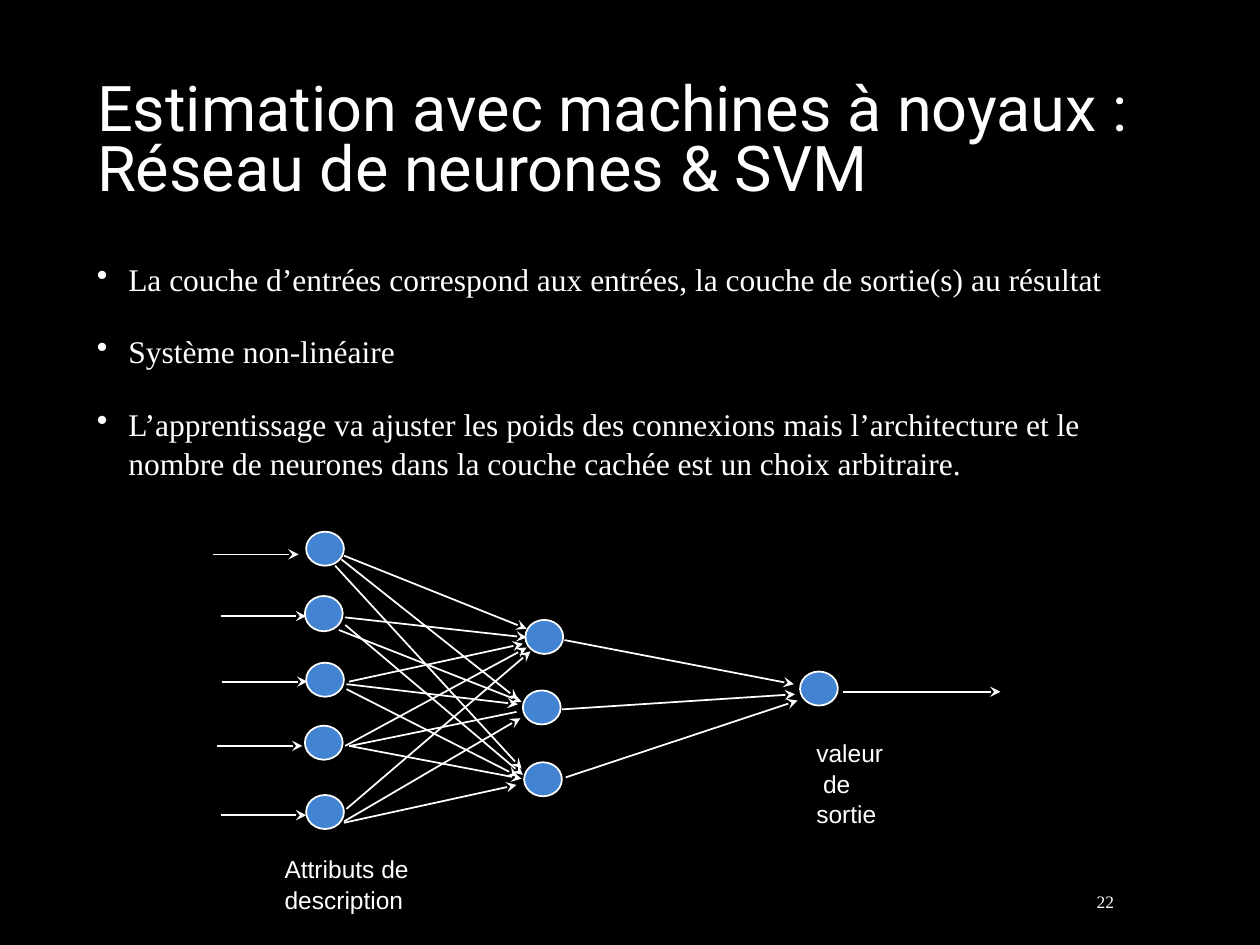
from typing import NamedTuple

from lxml import etree
from pptx import Presentation
from pptx.dml.color import RGBColor
from pptx.enum.shapes import MSO_CONNECTOR, MSO_SHAPE
from pptx.enum.text import MSO_ANCHOR, MSO_AUTO_SIZE, PP_ALIGN
from pptx.oxml.ns import qn
from pptx.util import Inches, Pt

BLACK = RGBColor(0x00, 0x00, 0x00)
WHITE = RGBColor(0xFF, 0xFF, 0xFF)
BLUE = RGBColor(0x42, 0x83, 0xD2)

LINE = MSO_CONNECTOR.STRAIGHT
OVAL = MSO_SHAPE.OVAL
LEFT, RIGHT = PP_ALIGN.LEFT, PP_ALIGN.RIGHT
TOP, MIDDLE, BOTTOM = MSO_ANCHOR.TOP, MSO_ANCHOR.MIDDLE, MSO_ANCHOR.BOTTOM
FIXED = MSO_AUTO_SIZE.NONE

SERIF = "Times New Roman"
NODE_W, NODE_H = 0.3, 0.27
INPUT_LEN = 0.68


class Node(NamedTuple):
    left: float
    top: float
    height: float = NODE_H


class Link(NamedTuple):
    x1: float
    y1: float
    x2: float
    y2: float
    arrow: bool = True


NODES = [
    # input layer
    Node(2.43, 4.22), Node(2.42, 4.73, 0.28), Node(2.43, 5.26),
    Node(2.42, 5.76), Node(2.43, 6.31),
    # hidden layer
    Node(4.17, 4.92), Node(4.15, 5.48), Node(4.16, 6.05),
    # output
    Node(6.35, 5.33),
]

INPUTS = [(1.69, 4.4), (1.75, 4.89), (1.76, 5.41), (1.72, 5.92), (1.75, 6.47)]

LINKS = [
    # to the first hidden node
    Link(2.73, 4.41, 4.18, 4.99), Link(2.74, 4.9, 4.18, 5.06),
    Link(2.77, 5.41, 4.15, 5.11), Link(2.74, 5.92, 4.18, 5.14),
    Link(2.75, 6.42, 4.21, 5.17),
    # to the second hidden node
    Link(2.71, 4.44, 4.11, 5.55), Link(2.69, 5, 4.14, 5.57),
    Link(2.75, 5.43, 4.11, 5.59), Link(2.78, 5.92, 4.1, 5.65, arrow=False),
    Link(2.73, 6.52, 4.13, 5.7),
    # to the third hidden node
    Link(2.66, 4.49, 4.14, 6.1), Link(2.74, 4.96, 4.15, 6.15),
    Link(2.75, 5.47, 4.11, 6.16), Link(2.77, 5.92, 4.14, 6.18),
    Link(2.73, 6.53, 4.1, 6.23),
    # to the output node and beyond
    Link(4.48, 5.08, 6.3, 5.43), Link(4.46, 5.63, 6.31, 5.51),
    Link(4.49, 6.17, 6.33, 5.56), Link(6.69, 5.49, 7.94, 5.49),
] + [Link(x, y, x + INPUT_LEN, y) for x, y in INPUTS]

POINTS = [
    "La couche d’entrées correspond aux entrées, la couche de sortie(s) au résultat",
    "Système non-linéaire",
    "L’apprentissage va ajuster les poids des connexions mais l’architecture et le "
    "nombre de neurones dans la couche cachée est un choix arbitraire.",
]


def add_bullet(para) -> None:
    props = para._p.get_or_add_pPr()
    props.set("marL", str(Inches(0.25)))
    props.set("indent", str(-Inches(0.25)))
    etree.SubElement(props, qn("a:buChar")).set("char", "•")


def write(shape, lines: list[str], *, size: float, font: str, align=LEFT,
          anchor=TOP, spacing: float = 1.04, before: float = 0,
          after: float = 0, bullet: bool = False) -> None:
    frame = shape.text_frame
    frame.word_wrap = True
    frame.auto_size = FIXED
    frame.vertical_anchor = anchor
    for i, line in enumerate(lines):
        para = frame.add_paragraph() if i else frame.paragraphs[0]
        if bullet:
            add_bullet(para)
        para.alignment = align
        para.line_spacing = spacing
        para.space_before = Pt(before if i else 0)
        para.space_after = Pt(after)
        run = para.add_run()
        run.text = line
        run.font.size = Pt(size)
        run.font.name = font
        run.font.color.rgb = WHITE


def add_text(slide, box: tuple, lines: list[str], **style) -> None:
    shape = slide.shapes.add_textbox(*map(Inches, box))
    write(shape, lines, **style)


def add_node(slide, node: Node) -> None:
    shape = slide.shapes.add_shape(
        OVAL, Inches(node.left), Inches(node.top),
        Inches(NODE_W), Inches(node.height))
    shape.shadow.inherit = False
    shape.fill.solid()
    shape.fill.fore_color.rgb = BLUE
    shape.line.color.rgb = WHITE
    shape.line.width = Pt(1)


def add_link(slide, link: Link) -> None:
    line = slide.shapes.add_connector(LINE, *map(Inches, link[:4]))
    line.line.color.rgb = WHITE
    line.line.width = Pt(1)
    if link.arrow:
        pen = line.line._get_or_add_ln()
        etree.SubElement(pen, qn("a:tailEnd")).set("type", "stealth")
    etree.SubElement(line._element.spPr, qn("a:effectLst"))


def main() -> None:
    deck = Presentation()
    deck.slide_width, deck.slide_height = Inches(10), Inches(7.5)
    slide = deck.slides.add_slide(deck.slide_layouts[5])
    slide.background.fill.solid()
    slide.background.fill.fore_color.rgb = BLACK

    title = slide.shapes.title
    title.left, title.top = Inches(0.67), Inches(0.42)
    title.width, title.height = Inches(8.66), Inches(1.25)
    write(title, ["Estimation avec machines à noyaux : Réseau de neurones & SVM"],
          size=36, font="Roboto", anchor=BOTTOM, spacing=0.8)

    add_text(slide, (0.67, 2, 8.66, 4.75), POINTS, size=18, font=SERIF,
             before=16, after=3, bullet=True)
    add_text(slide, (7.94, 7, 1, 0.3), ["22"], size=10, font=SERIF,
             align=RIGHT, anchor=MIDDLE)

    for node in NODES:
        add_node(slide, node)
    for link in LINKS:
        add_link(slide, link)

    add_text(slide, (2.16, 6.72, 1.25, 0.57), ["Attributs de", "description"],
             size=14, font="Arial")
    add_text(slide, (6.38, 5.8, 0.95, 0.49), ["valeur", " de sortie"],
             size=14, font="Arial")

    deck.save("out.pptx")


if __name__ == "__main__":
    main()
